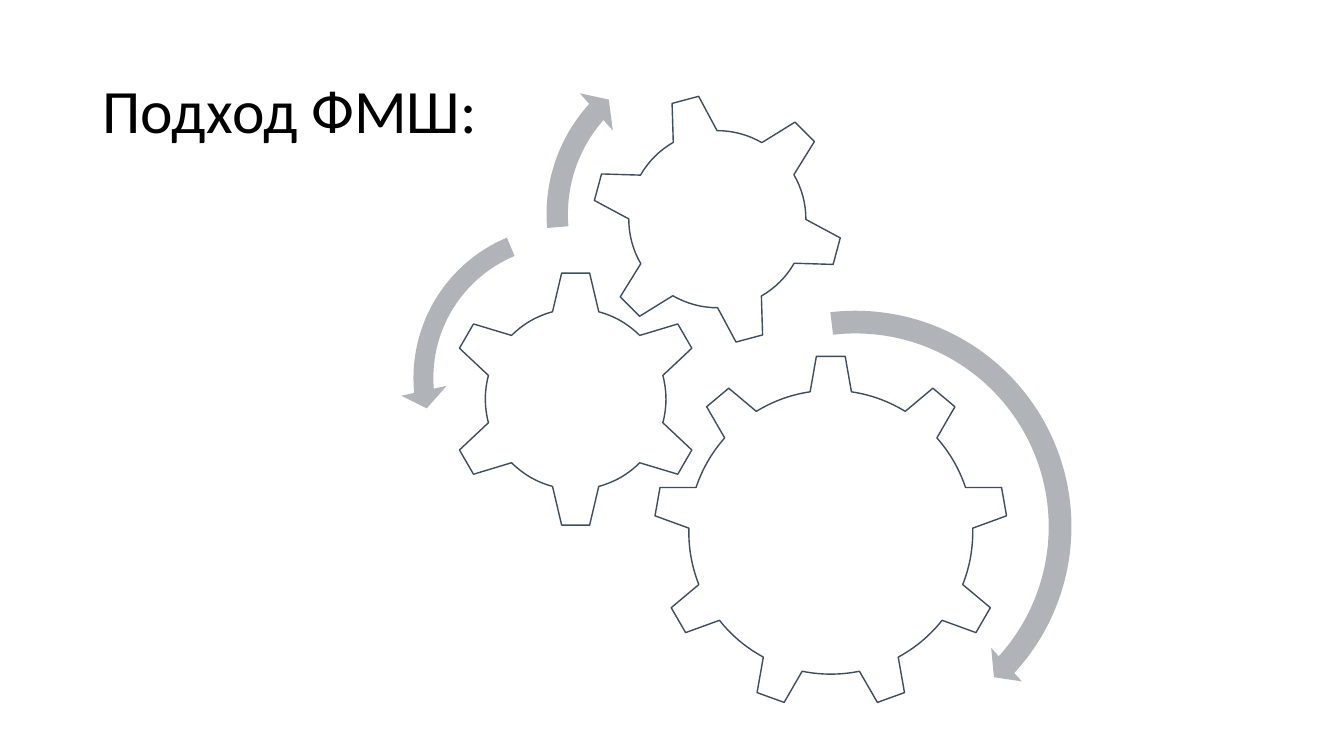
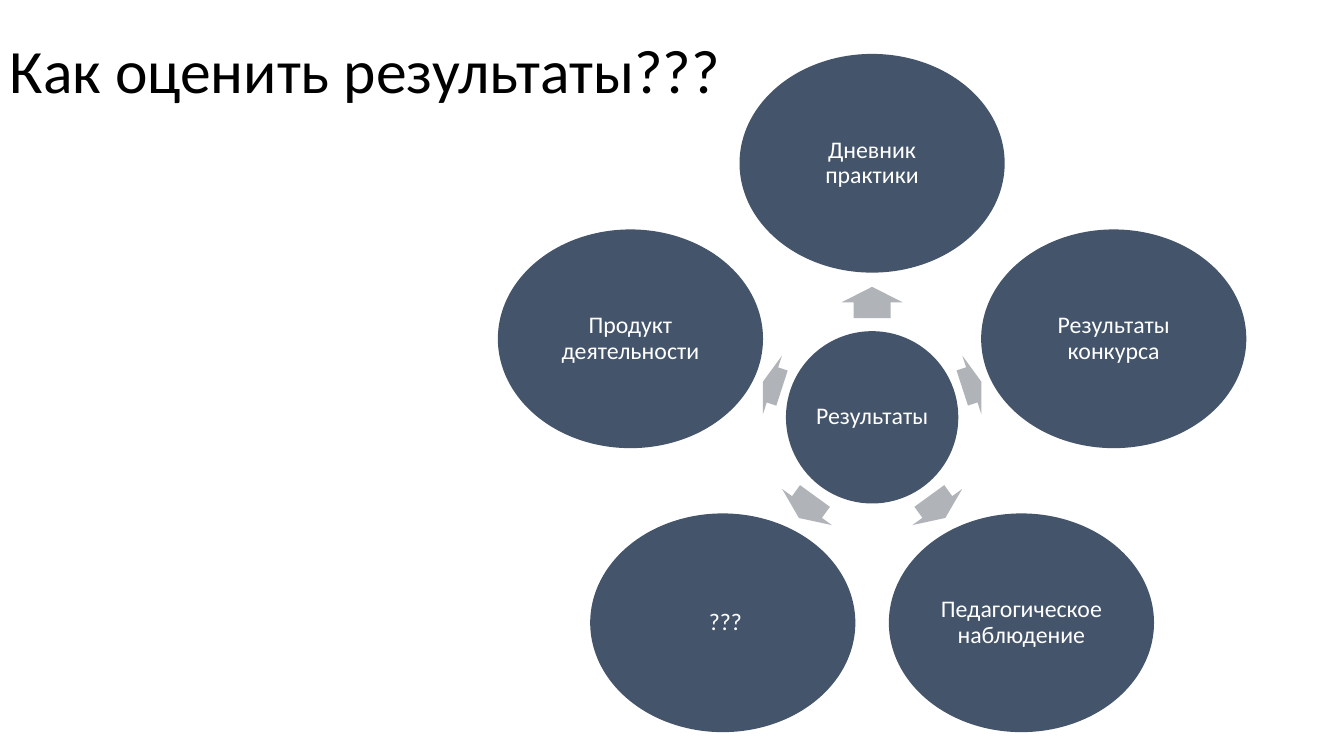
from math import cos, radians, sin

from pptx import Presentation
from pptx.dml.color import RGBColor
from pptx.enum.shapes import MSO_SHAPE
from pptx.enum.text import MSO_ANCHOR, PP_ALIGN
from pptx.util import Pt

PX = 9144  # EMU in one px, 100 px to the inch
FONT = "Calibri"
BLACK = RGBColor(0x00, 0x00, 0x00)
WHITE = RGBColor(0xFF, 0xFF, 0xFF)
SLATE = RGBColor(0x44, 0x54, 0x6A)
EDGE = RGBColor(0x3E, 0x4C, 0x60)
GREY = RGBColor(0xB0, 0xB4, 0xB9)

TITLE_SIZE = (1150, 145)
GEARS_TITLE = ("Подход ФМШ:", 92, 40)
WHEEL_TITLE = ("Как оценить результаты???", 0, 0)

# kind, left, top, size, turn
GEARS = [
    (MSO_SHAPE.GEAR_9, 648, 352, 352, 0),
    (MSO_SHAPE.GEAR_6, 443, 268, 256, 0),
    (MSO_SHAPE.GEAR_6, 586, 92, 251, 345),
]
# kind, left, top, size, adjustments
ARCS = [
    (MSO_SHAPE.CIRCULAR_ARROW, 623, 297, 451,
     (0.05, 2.99, 25.45, 158, 0.05)),
    (MSO_SHAPE.LEFT_CIRCULAR_ARROW, 397, 211, 328,
     (0.06, 4.3, 104.89, 148.38, 0.07)),
    (MSO_SHAPE.CIRCULAR_ARROW, 528, 36, 353,
     (0.06, 3.94, 133.14, 105.08, 0.07)),
]

HUB = "Результаты"
HUB_SIZE = (171, 171)
MID_X, MID_Y = 865, 414
RADIUS = 252
NODE_SIZE = (263, 217)
ARROW_WIDTH = 61
# text, arrow length, arrow distance from the hub; clockwise from the top
NODES = [
    ("Дневник практики", 31, 114),
    ("Результаты конкурса", 20, 104),
    ("Педагогическое наблюдение", 27, 110),
    (" ???", 27, 110),
    ("Продукт деятельности", 20, 104),
]


def add_text(shape, text, size, color, align, inset=None):
    frame = shape.text_frame
    frame.word_wrap = True
    frame.vertical_anchor = MSO_ANCHOR.MIDDLE
    if inset is not None:
        frame.margin_left = frame.margin_right = inset * PX
        frame.margin_top = frame.margin_bottom = inset * PX
    para = frame.paragraphs[0]
    para.alignment = align
    para.line_spacing = 0.9
    run = para.add_run()
    run.text = text
    run.font.name = FONT
    run.font.size = Pt(size)
    run.font.color.rgb = color


def add_title(slide, text, left, top):
    width, height = TITLE_SIZE
    box = slide.shapes.add_textbox(
        left * PX, top * PX, width * PX, height * PX)
    add_text(box, text, 44, BLACK, PP_ALIGN.LEFT)


def add_part(slide, kind, left, top, width, height, fill, line=None, turn=0):
    part = slide.shapes.add_shape(
        kind, round(left * PX), round(top * PX), width * PX, height * PX)
    part.shadow.inherit = False
    part.rotation = turn
    part.fill.solid()
    part.fill.fore_color.rgb = fill
    if line is None:
        part.line.fill.background()
    else:
        part.line.color.rgb = line
        part.line.width = Pt(1)
    return part


def adjust(part, values):
    for i, value in enumerate(values):
        part.adjustments[i] = value


def add_disc(slide, text, x, y, size):
    """Draw an ellipse with text, centred on x, y."""
    width, height = size
    disc = add_part(slide, MSO_SHAPE.OVAL, x - width / 2, y - height / 2,
                    width, height, SLATE)
    add_text(disc, text, 17, WHITE, PP_ALIGN.CENTER, inset=2)


def polar(angle, reach):
    turn = radians(angle)
    return MID_X + reach * cos(turn), MID_Y + reach * sin(turn)


def draw_gears(slide):
    add_title(slide, *GEARS_TITLE)
    for kind, left, top, size, turn in GEARS:
        add_part(slide, kind, left, top, size, size, WHITE, EDGE, turn)
    for kind, left, top, size, values in ARCS:
        arc = add_part(slide, kind, left, top, size, size, GREY)
        adjust(arc, values)


def draw_wheel(slide):
    add_title(slide, *WHEEL_TITLE)
    add_disc(slide, HUB, MID_X, MID_Y, HUB_SIZE)
    for i, (text, length, reach) in enumerate(NODES):
        angle = i * 360 / len(NODES) - 90
        x, y = polar(angle, reach)
        arrow = add_part(slide, MSO_SHAPE.RIGHT_ARROW, x - length / 2,
                         y - ARROW_WIDTH / 2, length, ARROW_WIDTH, GREY,
                         turn=angle % 360)
        adjust(arrow, (0.6, 0.5))
        add_disc(slide, text, *polar(angle, RADIUS), NODE_SIZE)


def main():
    deck = Presentation()
    deck.slide_width = 1333 * PX
    deck.slide_height = 750 * PX
    blank = deck.slide_layouts[6]
    for draw in (draw_gears, draw_wheel):
        draw(deck.slides.add_slide(blank))
    deck.save("out.pptx")


if __name__ == "__main__":
    main()
